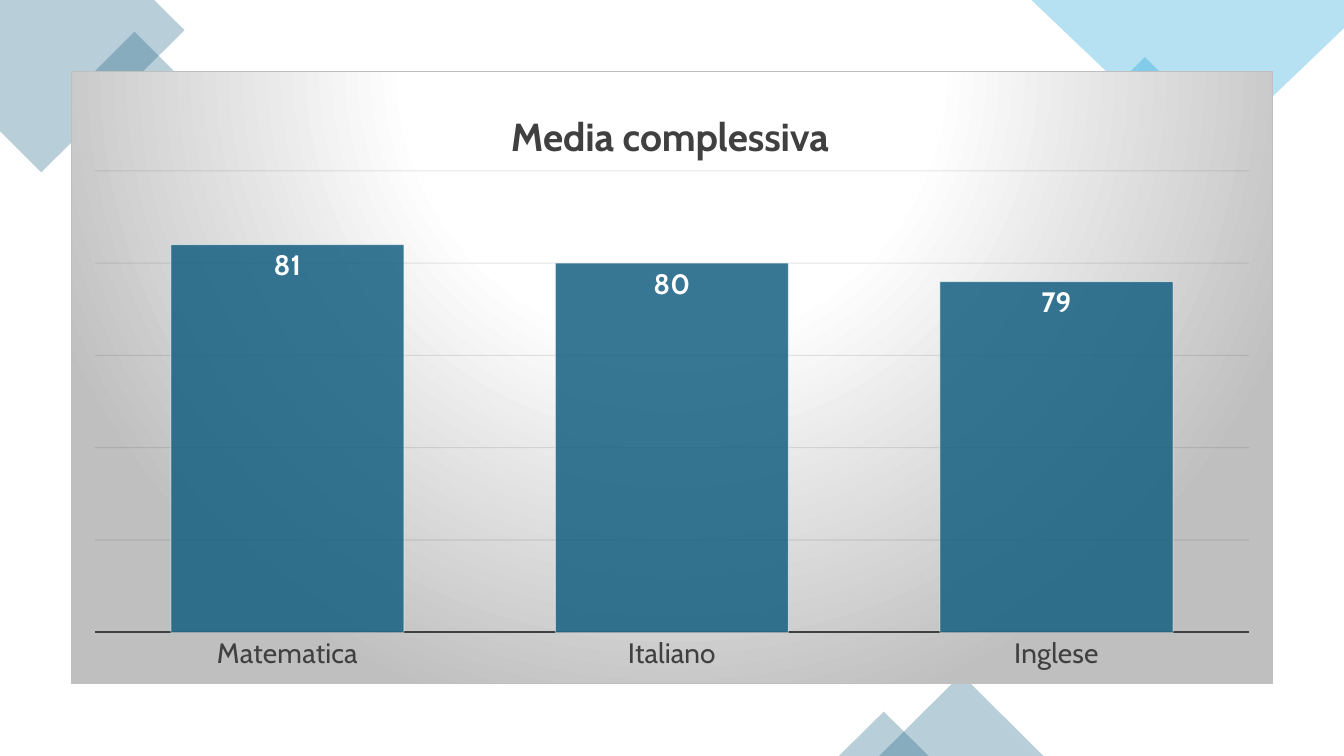
import pptx
import pptx.chart.data
import pptx.dml.color
import pptx.enum.chart
import pptx.enum.shapes
import pptx.oxml
import pptx.oxml.ns
import pptx.util
from pptx.util import Inches

RGBColor = pptx.dml.color.RGBColor
TEAL = RGBColor(0x15, 0x60, 0x82)
SKY = RGBColor(0x0F, 0x9E, 0xD5)
WHITE = RGBColor(0xFF, 0xFF, 0xFF)
BLACK = RGBColor(0x00, 0x00, 0x00)
CHARCOAL = RGBColor(0x40, 0x40, 0x40)
GRID = RGBColor(0x0D, 0x0D, 0x0D)
SILVER = RGBColor(0xBF, 0xBF, 0xBF)
FONT = "Cabin"
MARKS = {"Matematica": 81, "Italiano": 80, "Inglese": 79}


def set_alpha(colors, percent):
    for color in colors:
        alpha = color.makeelement(pptx.oxml.ns.qn("a:alpha"), {"val": str(percent * 1000)})
        color.append(alpha)


def style_decoration(shape, color):
    """Give a background shape its translucent, borderless look."""
    shape.shadow.inherit = False
    shape.fill.solid()
    shape.fill.fore_color.rgb = color
    shape.line.fill.background()
    set_alpha(shape.element.xpath("./p:spPr/a:solidFill/a:srgbClr"), 30)


def add_decoration(slide, kind, box, color, rotation=0):
    shape = slide.shapes.add_shape(kind, *map(Inches, box))
    shape.rotation = rotation
    style_decoration(shape, color)


def add_polygon(slide, corners, color):
    points = [(Inches(x), Inches(y)) for x, y in corners]
    builder = slide.shapes.build_freeform(*points[0])
    builder.add_line_segments(points[1:], close=True)
    style_decoration(builder.convert_to_shape(), color)


def format_font(font, size, color, bold=False):
    font.name = FONT
    font.size = pptx.util.Pt(size)
    font.bold = bold
    font.color.rgb = color


def format_line(line, color, width):
    line.color.rgb = color
    line.width = pptx.util.Pt(width)


def place(element, x, y, width=None, height=None):
    """Position a chart part by fractions of the chart area."""
    qn = pptx.oxml.ns.qn
    layout = element.find(qn("c:layout"))
    if layout is None:
        layout = element.makeelement(qn("c:layout"), {})
        element.insert(0, layout)
    settings = {"xMode": "edge", "yMode": "edge", "x": x, "y": y}
    if width:
        settings = {"layoutTarget": "inner", **settings, "w": width, "h": height}
    manual = layout.makeelement(qn("c:manualLayout"), {})
    layout.append(manual)
    for tag, value in settings.items():
        manual.append(manual.makeelement(qn("c:" + tag), {"val": str(value)}))


def fill_chart_area(chart):
    """Put a radial gradient and a thin border behind the chart."""
    stops = "".join(
        f'<a:gs pos="{position * 1000}"><a:srgbClr val="{color}"/></a:gs>'
        for position, color in ((0, WHITE), (39, WHITE), (100, SILVER)))
    area = pptx.oxml.parse_xml(
        f'<c:spPr {pptx.oxml.ns.nsdecls("c", "a")}>'
        f'<a:gradFill><a:gsLst>{stops}</a:gsLst><a:path path="circle">'
        '<a:fillToRect l="50000" t="-80000" r="50000" b="180000"/></a:path></a:gradFill>'
        f'<a:ln w="9525"><a:solidFill><a:srgbClr val="{SILVER}"/></a:solidFill></a:ln>'
        '</c:spPr>')
    chart.element.xpath("./c:chart")[0].addnext(area)


def format_axes(chart):
    subjects = chart.category_axis
    subjects.major_tick_mark = pptx.enum.chart.XL_TICK_MARK.NONE
    format_font(subjects.tick_labels.font, 20, CHARCOAL)
    format_line(subjects.format.line, CHARCOAL, 1.5)
    marks = chart.value_axis
    marks.visible = False
    marks.minimum_scale, marks.maximum_scale, marks.major_unit = 60, 85, 5
    format_line(marks.major_gridlines.format.line, GRID, 0.75)
    set_alpha(chart.element.xpath(".//c:majorGridlines//a:srgbClr"), 10)


def format_bars(chart):
    plot = chart.plots[0]
    plot.gap_width = 65
    plot.vary_by_categories = False
    bars = plot.series[0]
    bars.format.fill.solid()
    bars.format.fill.fore_color.rgb = TEAL
    format_line(bars.format.line, WHITE, 0.75)
    set_alpha(chart.element.xpath(".//c:ser/c:spPr/a:solidFill/a:srgbClr"), 85)
    set_alpha(chart.element.xpath(".//c:ser/c:spPr/a:ln//a:srgbClr"), 50)
    labels = bars.data_labels
    labels.show_value = True
    labels.number_format = "0"
    labels.number_format_is_linked = False
    labels.position = pptx.enum.chart.XL_LABEL_POSITION.INSIDE_END
    format_font(labels.font, 20, WHITE, bold=True)


def add_marks_chart(slide):
    data = pptx.chart.data.CategoryChartData(number_format="0")
    data.categories = list(MARKS)
    data.add_series("Series 1", list(MARKS.values()))
    chart = slide.shapes.add_chart(
        pptx.enum.chart.XL_CHART_TYPE.COLUMN_CLUSTERED,
        Inches(0.7), Inches(0.7), Inches(11.93), Inches(6.09), data).chart
    format_font(chart.font, 10, BLACK)
    chart.has_legend = False
    chart.has_title = True
    heading = chart.chart_title.text_frame.paragraphs[0].add_run()
    heading.text = "Media complessiva"
    format_font(heading.font, 28, CHARCOAL, bold=True)
    format_axes(chart)
    format_bars(chart)
    fill_chart_area(chart)
    place(chart.element.xpath(".//c:chart/c:title")[0], 0.36, 0.05)
    place(chart.element.xpath(".//c:plotArea")[0], 0.02, 0.163, 0.96, 0.753)


def main():
    deck = pptx.Presentation()
    deck.slide_width, deck.slide_height = Inches(13.33), Inches(7.5)
    slide = deck.slides.add_slide(deck.slide_layouts[6])
    kinds = pptx.enum.shapes.MSO_SHAPE
    add_polygon(slide, [(1.53, 0), (0, 0), (0, 1.3), (0.41, 1.71), (1.83, 0.3)], TEAL)
    add_decoration(slide, kinds.RECTANGLE, (0.98, 0.46, 0.71, 0.71), TEAL, 315)
    add_decoration(slide, kinds.RECTANGLE, (10.98, 0.72, 0.75, 0.75), SKY, 315)
    add_polygon(slide, [(13.33, 0), (10.23, 0), (11.93, 1.62), (13.33, 0.28)], SKY)
    for box in ((8.72, 6.69, 1.63, 0.81), (8.32, 7.06, 0.89, 0.44)):
        add_decoration(slide, kinds.ISOSCELES_TRIANGLE, box, TEAL)
    add_marks_chart(slide)
    deck.save("out.pptx")


if __name__ == "__main__":
    main()
